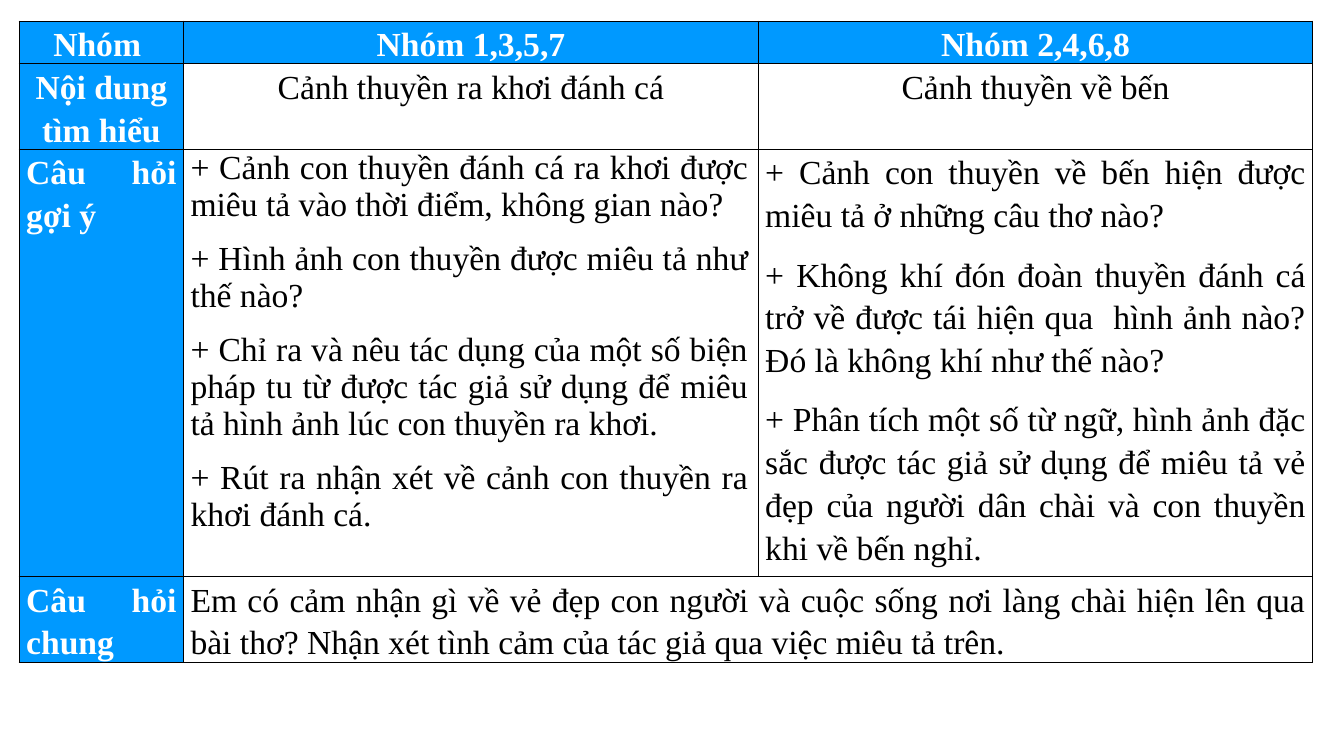
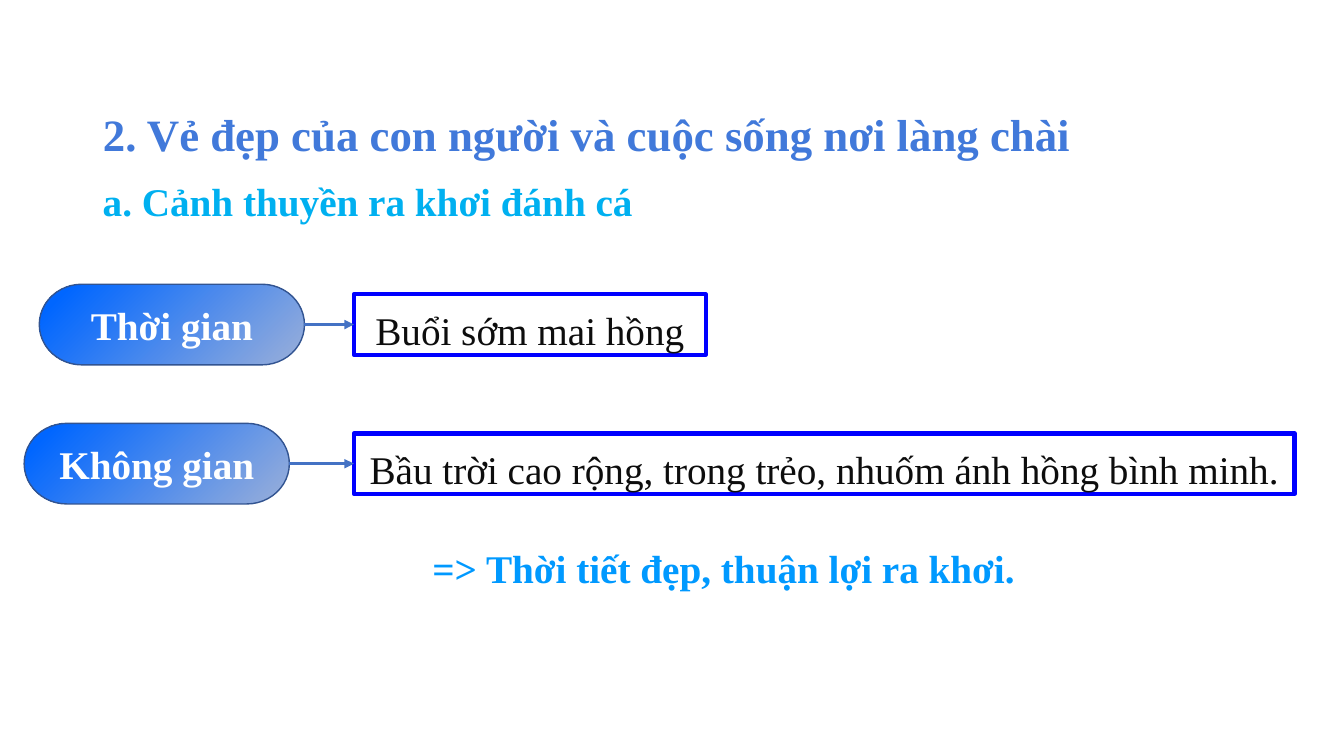
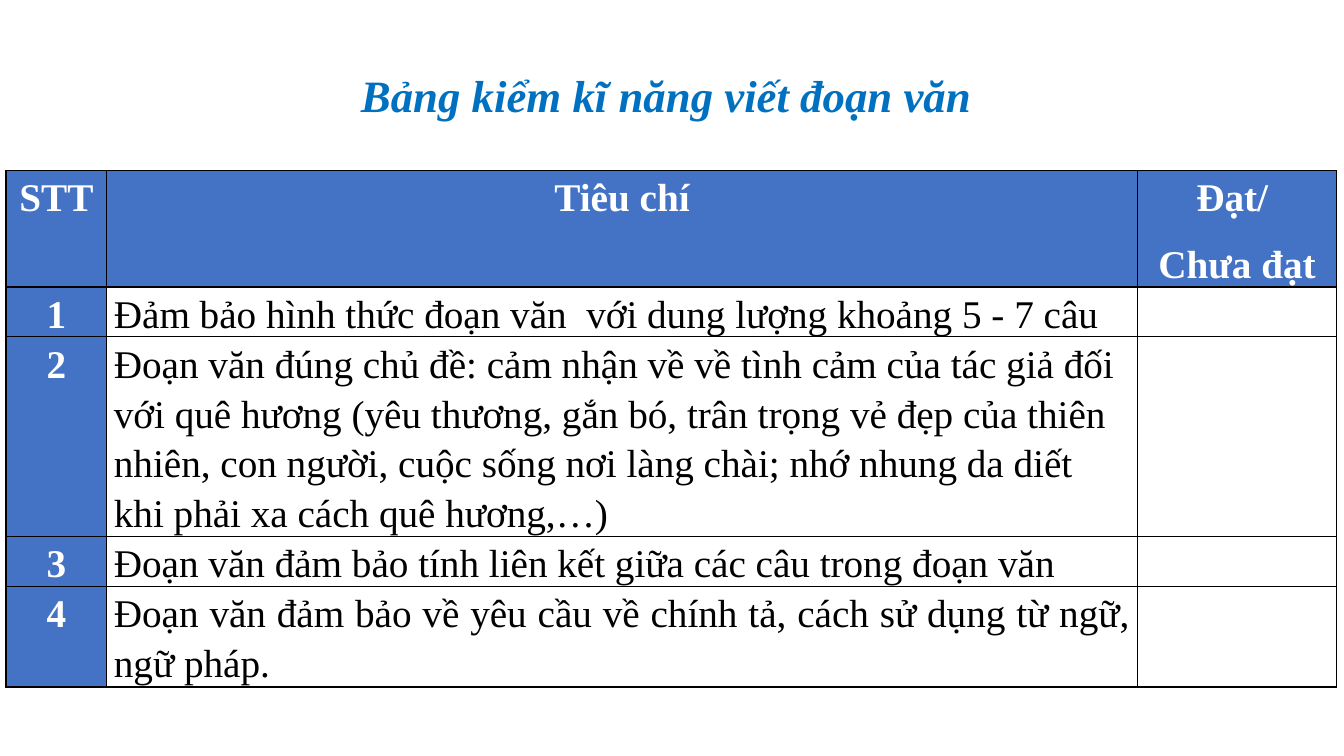
from lxml.etree import SubElement
from pptx import Presentation
from pptx.dml.color import RGBColor
from pptx.enum.shapes import MSO_CONNECTOR, MSO_SHAPE
from pptx.enum.text import MSO_ANCHOR, MSO_AUTO_SIZE, PP_ALIGN
from pptx.oxml.ns import qn
from pptx.util import Pt

PX = 9144
FONT = "Times New Roman"
COLORS = {
    "white": "FFFFFF", "black": "000000", "ink": "0D0D0D",
    "sky": "0099FF", "cyan": "00B0F0", "title": "4179DA", "deep": "0070C0",
    "accent": "4472C4", "edge": "325491", "frame": "0000FF",
    "pale": "8FAADC", "vivid": "0066FF",
}
ALIGN = {"L": PP_ALIGN.LEFT, "C": PP_ALIGN.CENTER, "J": PP_ALIGN.JUSTIFY}


def rgb(name):
    """Return a palette colour."""
    return RGBColor.from_string(COLORS[name])


def emu(*lengths):
    """Turn px lengths into EMU."""
    return [round(v * PX) for v in lengths]


def write(tf, text, size, color, bold=False, italic=False, align="L", spaced=True):
    """Fill a text frame, one paragraph a line."""
    tf.word_wrap = True
    for i, line in enumerate(text.split("\n")):
        p = tf.paragraphs[0] if i == 0 else tf.add_paragraph()
        p.text = line
        p.alignment = ALIGN[align]
        p.line_spacing = 1.15 if spaced else 1.0
        p.space_before = p.space_after = Pt(6 if spaced else 0)
        f = p.font
        f.name, f.size, f.bold, f.italic = FONT, Pt(size), bold, italic
        f.color.rgb = rgb(color)


def add_title(s, box, text, color, italic=False):
    """Place and format the title placeholder."""
    sp = s.shapes.title
    sp.left, sp.top, sp.width, sp.height = emu(*box)
    tf = sp.text_frame
    tf.auto_size = MSO_AUTO_SIZE.NONE
    tf.vertical_anchor = MSO_ANCHOR.MIDDLE
    write(tf, text, 32, color, True, italic, align="J", spaced=False)
    return sp


def add_label(s, box, text, color):
    """Add a bold line of text."""
    tf = s.shapes.add_textbox(*emu(*box)).text_frame
    write(tf, text, 28, color, True)


def add_borders(cell):
    """Draw thin black borders around a cell."""
    tcPr = cell._tc.get_or_add_tcPr()
    for side in ("a:lnL", "a:lnR", "a:lnT", "a:lnB"):
        ln = SubElement(tcPr, qn(side), w=str(Pt(1)))
        fill = SubElement(ln, qn("a:solidFill"))
        SubElement(fill, qn("a:srgbClr"), val=COLORS["black"])


def add_grid(s, origin, cols, rows, texts, aligns, head, size):
    """Add a table whose first row and column are headings."""
    frame = s.shapes.add_table(len(rows), len(cols), *emu(*origin, sum(cols), sum(rows)))
    table = frame.table
    table.first_row = table.horz_banding = False
    for col, width in zip(table.columns, cols):
        col.width = width * PX
    for row, height in zip(table.rows, rows):
        row.height = height * PX
    for r, line in enumerate(texts):
        for c, text in enumerate(line):
            cell = table.cell(r, c)
            heading = r == 0 or c == 0
            add_borders(cell)
            if heading:
                cell.fill.solid()
                cell.fill.fore_color.rgb = rgb(head)
            else:
                cell.fill.background()
            cell.margin_left = cell.margin_right = 7 * PX
            cell.margin_top = cell.margin_bottom = 0
            if text:
                write(cell.text_frame, text, size, "white" if heading else "black",
                      heading, align=aligns[r][c])
    return table


def add_pill(s, box, text):
    """Add a gradient pill with a bold caption."""
    sp = s.shapes.add_shape(MSO_SHAPE.FLOWCHART_TERMINATOR, *emu(*box))
    sp.shadow.inherit = False
    sp.fill.gradient()
    sp.fill.gradient_angle = 135
    for stop, (pos, color) in zip(sp.fill.gradient_stops, ((0.07, "pale"), (0.91, "vivid"))):
        stop.position = pos
        stop.color.rgb = rgb(color)
    sp.line.color.rgb = rgb("edge")
    sp.line.width = Pt(1)
    write(sp.text_frame, text, 28, "white", True, align="C", spaced=False)


def add_framed(s, box, text):
    """Add a framed answer."""
    sp = s.shapes.add_shape(MSO_SHAPE.RECTANGLE, *emu(*box))
    sp.shadow.inherit = False
    sp.fill.background()
    sp.line.color.rgb = rgb("frame")
    sp.line.width = Pt(3)
    tf = sp.text_frame
    tf.vertical_anchor = MSO_ANCHOR.TOP
    tf.auto_size = MSO_AUTO_SIZE.SHAPE_TO_FIT_TEXT
    write(tf, text, 28, "ink", align="C")


def add_arrow(s, x1, x2, y):
    """Add a level arrow."""
    cx = s.shapes.add_connector(MSO_CONNECTOR.STRAIGHT, *emu(x1, y, x2, y))
    cx.line.color.rgb = rgb("accent")
    cx.line.width = Pt(2.25)
    SubElement(cx.line._get_or_add_ln(), qn("a:tailEnd"), type="triangle")
    SubElement(cx._element.spPr, qn("a:effectLst"))


def add_fact(s, x, y, name, answer, width):
    """Add a pill pointing at its framed answer."""
    pill_w, pill_h, frame_x, frame_h = 263, 80, 351, 60
    add_pill(s, (x, y, pill_w, pill_h), name)
    add_framed(s, (frame_x, y + (pill_h - frame_h) // 2, width, frame_h), answer)
    add_arrow(s, x + pill_w, frame_x, y + pill_h // 2)


def questions_slide(prs):
    """Build the group questions table."""
    s = prs.slides.add_slide(prs.slide_layouts[6])
    texts = [
        ["Nhóm ", "Nhóm 1,3,5,7", "Nhóm 2,4,6,8"],
        ["Nội dung tìm hiểu", "Cảnh thuyền ra khơi đánh cá", "Cảnh thuyền về bến"],
        ["Câu hỏi gợi ý",
         "+ Cảnh con thuyền đánh cá ra khơi được miêu tả vào thời điểm, không gian nào? \n"
         "+ Hình ảnh con thuyền được miêu tả như thế nào?\n"
         "+ Chỉ ra và nêu tác dụng của một số biện pháp tu từ được tác giả sử dụng để "
         "miêu tả hình ảnh lúc con thuyền ra khơi.\n"
         "+ Rút ra nhận xét về cảnh con thuyền ra khơi đánh cá.",
         "+ Cảnh con thuyền về bến hiện được miêu tả ở những câu thơ nào?\n"
         "+ Không khí đón đoàn thuyền đánh cá trở về được tái hiện qua  hình ảnh nào? "
         "Đó là không khí như thế nào?\n"
         "+ Phân tích một số từ ngữ, hình ảnh đặc sắc được tác giả sử dụng để miêu tả "
         "vẻ đẹp của người dân chài và con thuyền khi về bến nghỉ."],
        ["Câu hỏi chung",
         "Em có cảm nhận gì về vẻ đẹp con người và cuộc sống nơi làng chài hiện lên qua "
         "bài thơ? Nhận xét tình cảm của tác giả qua việc miêu tả trên.", ""],
    ]
    table = add_grid(s, (19, 21), (163, 570, 550), (39, 81, 424, 81), texts,
                     ("CCC", "CCC", "JJJ", "JJJ"), "sky", 24)
    table.cell(3, 1).merge(table.cell(3, 2))
    departure = table.cell(2, 1)
    departure.margin_right = 10 * PX
    for p in departure.text_frame.paragraphs:
        p.line_spacing = 1.0


def scene_slide(prs):
    """Build the time and space slide."""
    s = prs.slides.add_slide(prs.slide_layouts[5])
    add_title(s, (92, 101, 997, 64), "2. Vẻ đẹp của con người và cuộc sống nơi làng chài", "title")
    add_label(s, (92, 164, 755, 64), "a. Cảnh thuyền ra khơi đánh cá", "cyan")
    add_fact(s, 39, 282, "Thời gian", "Buổi sớm mai hồng", 349)
    add_fact(s, 24, 420, "Không gian",
             "Bầu trời cao rộng, trong trẻo, nhuốm ánh hồng bình minh.", 933)
    add_label(s, (419, 528, 693, 60), "=> Thời tiết đẹp, thuận lợi ra khơi.", "sky")


def checklist_slide(prs):
    """Build the writing checklist."""
    s = prs.slides.add_slide(prs.slide_layouts[5])
    sp = add_title(s, (348, 62, 637, 64), "Bảng kiểm kĩ năng viết đoạn văn", "deep", True)
    sp.fill.solid()
    sp.fill.fore_color.rgb = rgb("white")
    criteria = [
        "Đảm bảo hình thức đoạn văn  với dung lượng khoảng 5 - 7 câu",
        "Đoạn văn đúng chủ đề: cảm nhận về về tình cảm của tác giả đối với quê hương "
        "(yêu thương, gắn bó, trân trọng vẻ đẹp của thiên nhiên, con người, cuộc sống "
        "nơi làng chài; nhớ nhung da diết khi phải xa cách quê hương,…)",
        "Đoạn văn đảm bảo tính liên kết giữa các câu trong đoạn văn",
        "Đoạn văn đảm bảo về yêu cầu về chính tả, cách sử dụng từ ngữ, ngữ pháp.",
    ]
    texts = [["STT", "Tiêu chí", "Đạt/ \nChưa đạt"]]
    texts += [[str(i), text, ""] for i, text in enumerate(criteria, 1)]
    add_grid(s, (6, 169), (100, 1022, 198), (65, 24, 179, 19, 100), texts,
             ("CCC", "CJC", "CLC", "CJC", "CJC"), "accent", 28)


def main():
    """Build and save the presentation."""
    prs = Presentation()
    prs.slide_width, prs.slide_height = emu(1333, 750)
    questions_slide(prs)
    scene_slide(prs)
    checklist_slide(prs)
    prs.save("out.pptx")


if __name__ == "__main__":
    main()
